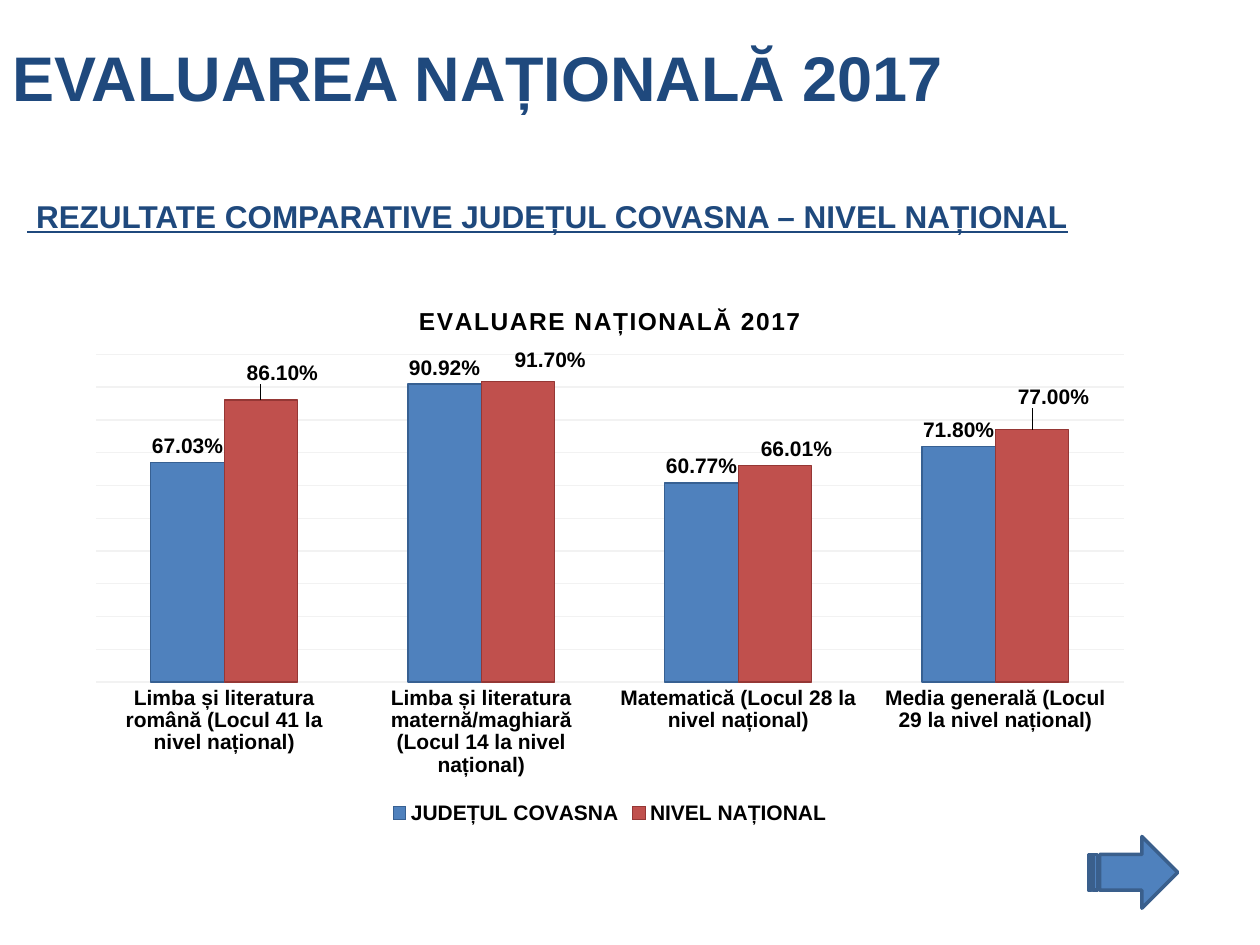
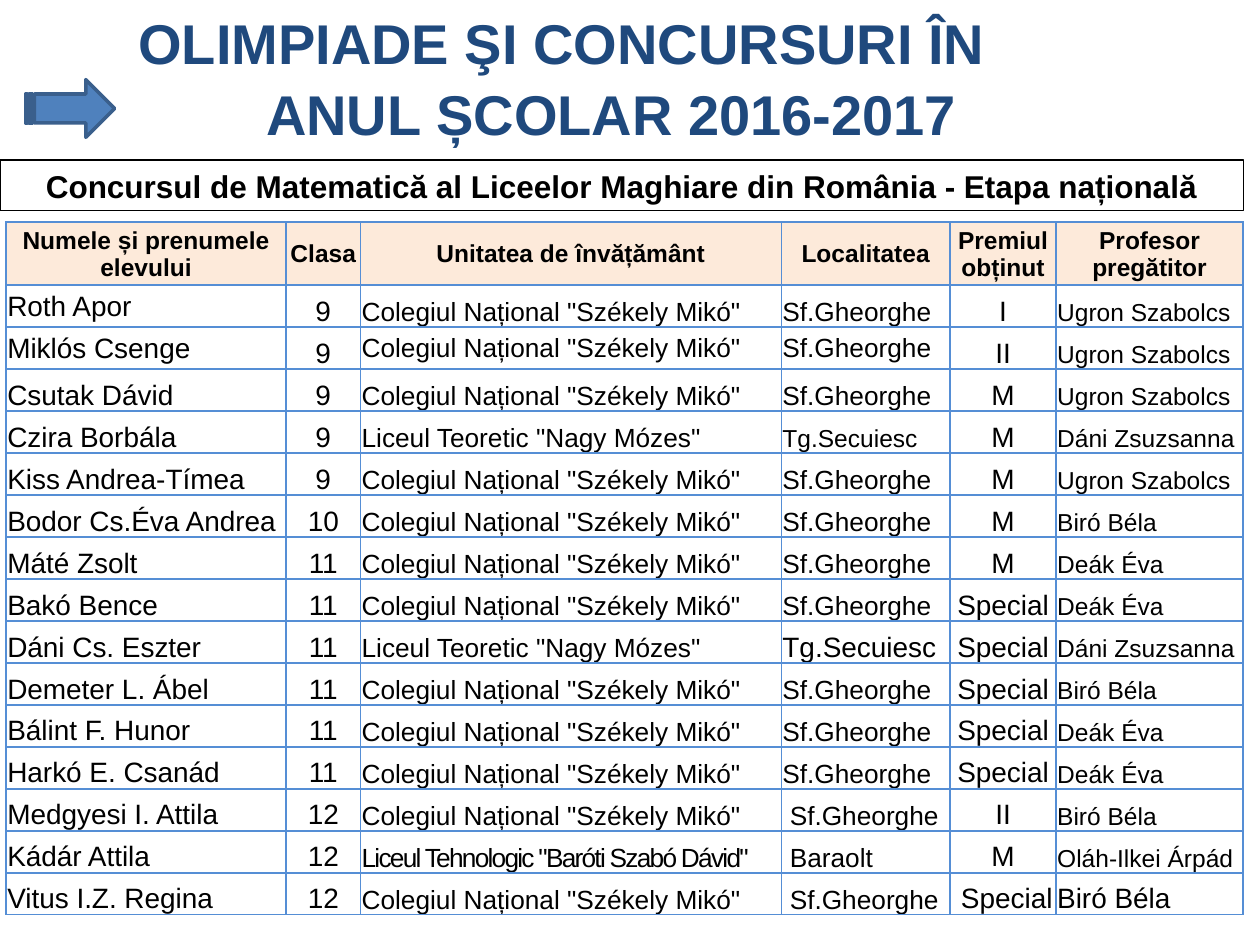
"""Build two slides: the 2017 national evaluation chart and the mathematics contest results table."""
from dataclasses import dataclass

from lxml import etree
from pptx import Presentation
from pptx.chart.data import CategoryChartData
from pptx.dml.color import RGBColor
from pptx.enum.chart import XL_CHART_TYPE, XL_LABEL_POSITION, XL_LEGEND_POSITION, XL_TICK_MARK
from pptx.enum.shapes import MSO_SHAPE
from pptx.enum.text import MSO_ANCHOR, PP_ALIGN
from pptx.oxml import parse_xml
from pptx.oxml.ns import nsdecls, qn
from pptx.util import Pt

LEFT, CENTER = PP_ALIGN.LEFT, PP_ALIGN.CENTER
MIDDLE, BOTTOM = MSO_ANCHOR.MIDDLE, MSO_ANCHOR.BOTTOM
COLUMN_CLUSTERED = XL_CHART_TYPE.COLUMN_CLUSTERED
OUTSIDE_END = XL_LABEL_POSITION.OUTSIDE_END
LEGEND_BOTTOM = XL_LEGEND_POSITION.BOTTOM
NO_TICK = XL_TICK_MARK.NONE
STRIPED_ARROW = MSO_SHAPE.STRIPED_RIGHT_ARROW


@dataclass(frozen=True)
class Theme:
    font: str = "Arial"
    navy: str = "1F497D"
    black: str = "000000"
    blue: str = "4F81BD"
    blue_line: str = "376092"
    red: str = "C0504D"
    red_line: str = "953735"
    arrow_line: str = "3A5F8C"
    grid: str = "F2F2F2"
    table_line: str = "558ED5"
    header_fill: str = "FDEADA"
    title: int = 36
    long_title: int = 32
    subtitle: int = 18
    header: int = 14
    chart_title: int = 14
    chart: int = 12


THEME = Theme()


def write(frame, text, size, color=THEME.black, bold=False, underline=False,
          align=LEFT, anchor=MIDDLE, indents=(), line_spacing=None, spacing=None):
    """Fill a text frame with one paragraph per line of text."""
    frame.word_wrap = True
    frame.vertical_anchor = anchor
    for index, line in enumerate(text.split("\n")):
        paragraph = frame.paragraphs[0] if index == 0 else frame.add_paragraph()
        paragraph.alignment = align
        if line_spacing:
            paragraph.line_spacing = line_spacing
        if indents:
            paragraph._p.get_or_add_pPr().set("marL", str(Pt(indents[index])))
        run = paragraph.add_run()
        run.text = line
        font = run.font
        font.name, font.size, font.bold, font.underline = THEME.font, Pt(size), bold, underline
        font.color.rgb = RGBColor.from_string(color)
        if spacing:
            run._r.get_or_add_rPr().set("spc", str(spacing))


def layout(x, y, width=None, height=None):
    """Return a manual chart layout in fractions of the chart."""
    element = etree.fromstring(f"<c:layout {nsdecls('c')}><c:manualLayout/></c:layout>")
    values = {"x": x, "y": y}
    if width:
        values = {"layoutTarget": "inner", "xMode": "edge", "yMode": "edge",
                  **values, "w": width, "h": height}
    for name, value in values.items():
        etree.SubElement(element[0], qn(f"c:{name}")).set("val", str(value))
    return parse_xml(etree.tostring(element))


presentation = Presentation()
presentation.slide_width, presentation.slide_height = Pt(720), Pt(540)
blank = presentation.slide_layouts[6]
results_slide = presentation.slides.add_slide(blank)
contest_slide = presentation.slides.add_slide(blank)

title_box = (0, 1.5, 720, 84)
heading = {"color": THEME.navy, "bold": True}
text_boxes = [
    (results_slide, title_box, "EVALUAREA NAȚIONALĂ 2017", {"size": THEME.title, **heading}),
    (results_slide, (8.5, 106.5, 613.5, 34),
     " REZULTATE COMPARATIVE JUDEȚUL COVASNA – NIVEL NAȚIONAL",
     {"size": THEME.subtitle, "underline": True, **heading}),
    (contest_slide, title_box, "OLIMPIADE ŞI CONCURSURI ÎN\nANUL ȘCOLAR 2016-2017",
     {"size": THEME.long_title, "indents": (72, 145), "line_spacing": 1.05, **heading}),
    (contest_slide, (0, 91.5, 710.5, 29),
     "Concursul de Matematică al Liceelor Maghiare din România - Etapa națională",
     {"size": THEME.subtitle, "bold": True, "align": CENTER}),
]
for slide, box, text, text_format in text_boxes:
    shape = slide.shapes.add_textbox(*map(Pt, box))
    write(shape.text_frame, text, **text_format)
contest_name = shape
contest_name.line.color.rgb = RGBColor.from_string(THEME.black)
contest_name.line.width = Pt(0.75)

chart_data = CategoryChartData(number_format="0.00%")
chart_data.categories = [
    "Limba și literatura română (Locul 41 la nivel național)",
    "Limba și literatura maternă/maghiară (Locul 14 la nivel național)",
    "Matematică (Locul 28 la nivel național)",
    "Media generală (Locul 29 la nivel național)",
]
chart_data.add_series("JUDEȚUL COVASNA", (0.6703, 0.9092, 0.6077, 0.718))
chart_data.add_series("NIVEL NAȚIONAL", (0.861, 0.917, 0.6601, 0.77))
chart = results_slide.shapes.add_chart(
    COLUMN_CLUSTERED, Pt(42.5), Pt(162), Pt(612), Pt(312), chart_data).chart
chart.font.name, chart.font.size, chart.font.bold = THEME.font, Pt(THEME.chart), True
chart.font.color.rgb = RGBColor.from_string(THEME.black)
write(chart.chart_title.text_frame, "EVALUARE NAȚIONALĂ 2017", THEME.chart_title,
      bold=True, align=CENTER, spacing=75)
chart.chart_title.include_in_layout = False
chart.has_legend = True
chart.legend.position = LEGEND_BOTTOM
chart.legend.include_in_layout = False

category_axis, value_axis = chart.category_axis, chart.value_axis
category_axis.major_tick_mark = NO_TICK
category_axis.format.line.fill.background()
value_axis.minimum_scale, value_axis.maximum_scale, value_axis.major_unit = 0, 1, 0.1
value_axis.visible = False
grid_line = value_axis.major_gridlines.format.line
grid_line.color.rgb = RGBColor.from_string(THEME.grid)
grid_line.width = Pt(0.75)

plot = chart.plots[0]
plot.gap_width, plot.overlap, plot.vary_by_categories = 150, 0, False
plot_area = chart._chartSpace.chart.plotArea
for old_layout in plot_area.findall(qn("c:layout")):
    plot_area.remove(old_layout)
plot_area.insert(0, layout(0.02, 0.13, 0.96, 0.6))

series_colors = [(THEME.blue, THEME.blue_line), (THEME.red, THEME.red_line)]
for series, (fill_color, line_color) in zip(plot.series, series_colors):
    series.format.fill.solid()
    series.format.fill.fore_color.rgb = RGBColor.from_string(fill_color)
    series.format.line.color.rgb = RGBColor.from_string(line_color)
    series.format.line.width = Pt(0.75)
    labels = series.data_labels
    labels.show_value, labels.position = True, OUTSIDE_END
    labels.number_format, labels.number_format_is_linked = "0.00%", False
    labels.font.name, labels.font.size, labels.font.bold = THEME.font, Pt(THEME.chart), True
    labels.font.color.rgb = RGBColor.from_string(THEME.black)

national = plot.series[1]
label_shifts = [(0.02, -0.02), (0.03, -0.01), (0.02, 0), (0.02, -0.03)]
for index in range(len(label_shifts)):
    national.points[index].data_label.position = OUTSIDE_END
point_labels = national.data_labels._element.findall(qn("c:dLbl"))
for point_label, shift in zip(point_labels, label_shifts):
    point_label.insert(1, layout(*shift))

headers = ["Numele și prenumele\nelevului", "Clasa", "Unitatea de învățământ",
           "Localitatea", "Premiul obținut", "Profesor\npregătitor"]
miko = 'Colegiul Național "Székely Mikó"'
mozes = 'Liceul Teoretic "Nagy Mózes"'
baroti = 'Liceul Tehnologic "Baróti Szabó Dávid"'
gheorghe, secuiesc = "Sf.Gheorghe", "Tg.Secuiesc"
ugron, dani, biro, deak = "Ugron Szabolcs", "Dáni Zsuzsanna", "Biró Béla", "Deák Éva"
pupils = [
    ("Roth Apor", "9", miko, gheorghe, "I", ugron),
    ("Miklós Csenge", "9", miko, gheorghe, "II", ugron),
    ("Csutak Dávid", "9", miko, gheorghe, "M", ugron),
    ("Czira Borbála", "9", mozes, secuiesc, "M", dani),
    ("Kiss Andrea-Tímea", "9", miko, gheorghe, "M", ugron),
    ("Bodor Cs.Éva Andrea", "10", miko, gheorghe, "M", biro),
    ("Máté Zsolt", "11", miko, gheorghe, "M", deak),
    ("Bakó Bence", "11", miko, gheorghe, "Special", deak),
    ("Dáni Cs. Eszter", "11", mozes, secuiesc, "Special", dani),
    ("Demeter L. Ábel", "11", miko, gheorghe, "Special", biro),
    ("Bálint F. Hunor", "11", miko, gheorghe, "Special", deak),
    ("Harkó E. Csanád", "11", miko, gheorghe, "Special", deak),
    ("Medgyesi I. Attila", "12", miko, gheorghe, "II", biro),
    ("Kádár Attila", "12", baroti, "Baraolt", "M", "Oláh-Ilkei Árpád"),
    ("Vitus I.Z. Regina", "12", miko, gheorghe, "Special", biro),
]
column_widths = (160, 42.5, 240.5, 96.5, 60.5, 107)
column_sizes = (16, 16, 15, 15, 16, 14)
column_alignments = (LEFT, CENTER, LEFT, LEFT, CENTER, LEFT)
cell_exceptions = {
    (1, 0): {"anchor": MIDDLE}, (2, 0): {"anchor": MIDDLE},
    (2, 2): {"anchor": MIDDLE}, (2, 3): {"anchor": MIDDLE},
    (4, 3): {"size": 14}, (9, 3): {"size": 16},
    (14, 2): {"spacing": -100}, (15, 5): {"size": 16},
}
indented_cells = {(13, 3), (14, 3), (15, 3), (15, 4)}

rows = [headers, *pupils]
table = contest_slide.shapes.add_table(
    len(rows), len(headers), Pt(3.5), Pt(127), Pt(sum(column_widths)), Pt(396)).table
table.first_row = table.horz_banding = False
for column, width in zip(table.columns, column_widths):
    column.width = Pt(width)
for row_index, row in enumerate(rows):
    table.rows[row_index].height = Pt(24 if row_index else 36)
    for column_index, text in enumerate(row):
        position = (row_index, column_index)
        cell = table.cell(*position)
        cell.margin_left = Pt(4.9 if position in indented_cells else 0.7)
        cell.margin_right = cell.margin_top = Pt(0.7)
        cell.margin_bottom = 0
        if row_index:
            cell.fill.background()
            cell_format = {"size": column_sizes[column_index], "anchor": BOTTOM,
                           "align": column_alignments[column_index],
                           **cell_exceptions.get(position, {})}
        else:
            cell.fill.solid()
            cell.fill.fore_color.rgb = RGBColor.from_string(THEME.header_fill)
            cell_format = {"size": THEME.header, "bold": True, "align": CENTER}
        cell.vertical_anchor = cell_format.get("anchor", MIDDLE)
        write(cell.text_frame, text, **cell_format)
        cell_properties = cell._tc.get_or_add_tcPr()
        cell_properties.attrib.pop("wrap", None)
        for index, side in enumerate(("lnL", "lnR", "lnT", "lnB")):
            cell_properties.insert(index, parse_xml(
                f'<a:{side} {nsdecls("a")} w="{Pt(1)}"><a:solidFill>'
                f'<a:srgbClr val="{THEME.table_line}"/></a:solidFill></a:{side}>'))

arrows = [(results_slide, (622, 478, 51, 41)), (contest_slide, (14.5, 45.5, 51, 33))]
for slide, box in arrows:
    arrow = slide.shapes.add_shape(STRIPED_ARROW, *map(Pt, box))
    arrow.shadow.inherit = False
    arrow.fill.solid()
    arrow.fill.fore_color.rgb = RGBColor.from_string(THEME.blue)
    arrow.line.color.rgb = RGBColor.from_string(THEME.arrow_line)
    arrow.line.width = Pt(2)

presentation.save("out.pptx")
